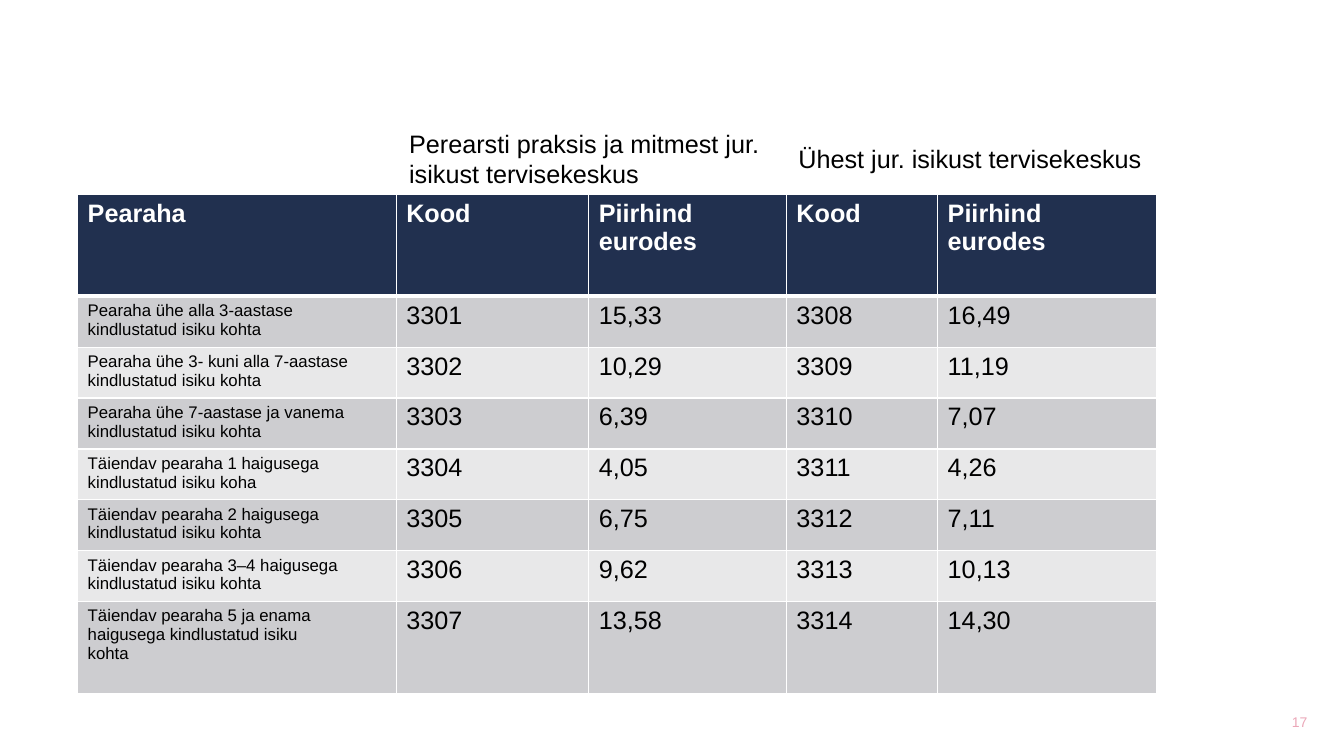
from lxml.etree import SubElement
from pptx import Presentation
from pptx.dml.color import RGBColor
from pptx.enum.text import MSO_ANCHOR as Anchor, MSO_AUTO_SIZE as AutoSize, PP_ALIGN as Align
from pptx.oxml.ns import qn
from pptx.util import Inches, Pt

WHITE, BLACK, NAVY, PINK = "FFFFFF", "000000", "21304F", "EBA7B8"
BANDS = ("E8E8E9", "CDCDD0")
COLUMN_WIDTHS = (3.16, 1.91, 1.96, 1.5, 2.17)
HEADER_HEIGHT, LAST_HEIGHT = 1.01, 0.91
HEADINGS = ("Pearaha", "Kood", "Piirhind eurodes", "Kood", "Piirhind eurodes")
FEES = (
    ("Pearaha ühe alla 3-aastase kindlustatud isiku kohta", "3301", "15,33", "3308", "16,49"),
    ("Pearaha ühe 3- kuni alla 7-aastase kindlustatud isiku kohta", "3302", "10,29", "3309", "11,19"),
    ("Pearaha ühe 7-aastase ja vanema kindlustatud isiku kohta", "3303", "6,39", "3310", "7,07"),
    ("Täiendav pearaha 1 haigusega kindlustatud isiku koha", "3304", "4,05", "3311", "4,26"),
    ("Täiendav pearaha 2 haigusega kindlustatud isiku kohta", "3305", "6,75", "3312", "7,11"),
    ("Täiendav pearaha 3–4 haigusega kindlustatud isiku kohta", "3306", "9,62", "3313", "10,13"),
    ("Täiendav pearaha 5 ja enama haigusega kindlustatud isiku\nkohta", "3307", "13,58", "3314", "14,30"),
)


def color(hex_value):
    return RGBColor.from_string(hex_value)


def write_text(frame, text, size, hex_value, bold=False, align=Align.LEFT):
    font_format = {"name": "Arial", "size": Pt(size), "bold": bold}
    frame.text = text
    for paragraph in frame.paragraphs:
        paragraph.alignment = align
        for run in paragraph.runs:
            for name, value in font_format.items():
                setattr(run.font, name, value)
            run.font.color.rgb = color(hex_value)


def add_label(slide, box, text, size, hex_value, align=Align.LEFT, **frame_format):
    frame = slide.shapes.add_textbox(*map(Inches, box)).text_frame
    write_text(frame, text, size, hex_value, align=align)
    for name, value in {"word_wrap": True, **frame_format}.items():
        setattr(frame, name, value)


def set_borders(cell, widths):
    properties = cell._tc.get_or_add_tcPr()
    for side, width in widths.items():
        line = SubElement(properties, qn(f"a:ln{side}"), w=str(Pt(width)))
        fill = SubElement(line, qn("a:solidFill"))
        SubElement(fill, qn("a:srgbClr"), val=WHITE)


def fill_cell(cell, text, row, column):
    header = row == 0
    set_borders(cell, {"L": 1, "R": 1, "T": 3 if row == 1 else 1, "B": 3 if header else 1})
    cell.fill.solid()
    cell.fill.fore_color.rgb = color(NAVY if header else BANDS[row % 2])
    cell.margin_right = Inches(0.4)
    size = 18 if header or column else 12
    write_text(cell.text_frame, text, size, WHITE if header else BLACK, bold=header)


def add_fee_table(slide, box):
    rows = (HEADINGS, *FEES)
    table = slide.shapes.add_table(len(rows), len(HEADINGS), *map(Inches, box)).table
    for column, width in zip(table.columns, COLUMN_WIDTHS):
        column.width = Inches(width)
    middle_count = len(FEES) - 1
    middle_height = (box[3] - HEADER_HEIGHT - LAST_HEIGHT) / middle_count
    heights = [HEADER_HEIGHT] + [middle_height] * middle_count + [LAST_HEIGHT]
    for row_index, (texts, height) in enumerate(zip(rows, heights)):
        table.rows[row_index].height = Inches(height)
        for column_index, text in enumerate(texts):
            fill_cell(table.cell(row_index, column_index), text, row_index, column_index)


def add_group_labels(slide, box):
    left, top, width, height = box
    first_width, second_height = 3.86, 0.4
    second_top = top + (height - second_height) / 2
    grow = {"auto_size": AutoSize.SHAPE_TO_FIT_TEXT}
    add_label(slide, (left, top, first_width, height),
              "Perearsti praksis ja mitmest jur. isikust tervisekeskus", 18, BLACK, **grow)
    add_label(slide, (left + first_width, second_top, width - first_width, second_height),
              "Ühest jur. isikust tervisekeskus", 18, BLACK, **grow)


def build_fee_slide(presentation):
    slide = presentation.slides.add_slide(presentation.slide_layouts[6])
    add_label(slide, (12.45, 6.82, 0.88, 0.68), "17", 10, PINK, Align.CENTER,
              vertical_anchor=Anchor.MIDDLE)
    add_fee_table(slide, (0.77, 1.93, sum(COLUMN_WIDTHS), 4.95))
    add_group_labels(slide, (3.96, 1.22, 7.51, 0.71))


def main():
    presentation = Presentation()
    presentation.slide_width = Inches(13.33)
    presentation.slide_height = Inches(7.5)
    build_fee_slide(presentation)
    presentation.save("out.pptx")


if __name__ == "__main__":
    main()
